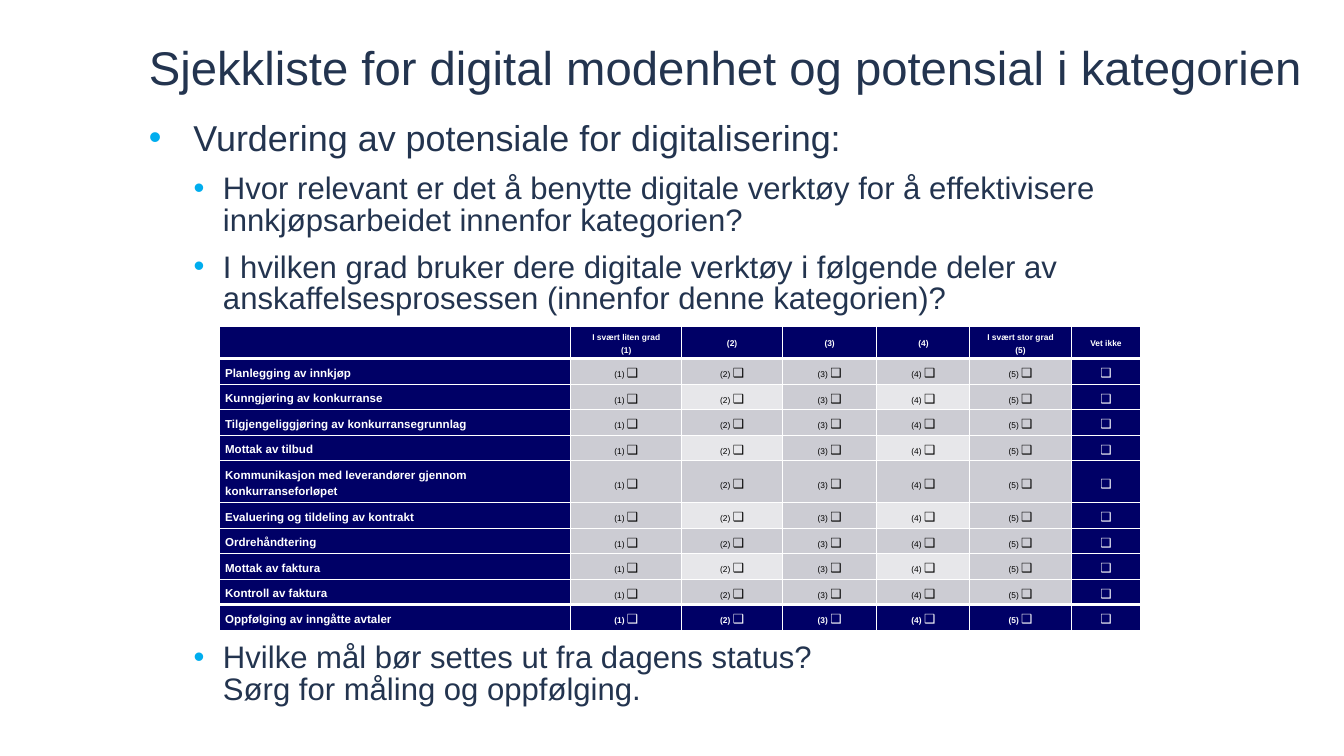
from lxml import etree
from pptx import Presentation
from pptx.dml.color import RGBColor
from pptx.enum.text import MSO_ANCHOR, PP_ALIGN
from pptx.oxml.ns import qn
from pptx.util import Pt

BOTTOM, MIDDLE, TOP = MSO_ANCHOR.BOTTOM, MSO_ANCHOR.MIDDLE, MSO_ANCHOR.TOP
CENTER, LEFT = PP_ALIGN.CENTER, PP_ALIGN.LEFT

INK = RGBColor(0x23, 0x34, 0x4F)
BULLET_BLUE = RGBColor(0x00, 0xAD, 0xEE)
NAVY = RGBColor(0x00, 0x00, 0x66)
GREY = RGBColor(0xCC, 0xCC, 0xD3)
LIGHT_GREY = RGBColor(0xE7, 0xE7, 0xEA)
WHITE = RGBColor(0xFF, 0xFF, 0xFF)
BLACK = RGBColor(0x00, 0x00, 0x00)

FONT = "Arial"
CHECKBOX = "❑"
MARGIN = 141.8
BODY_WIDTH = 1105
# Per outline level: size, line spacing, left indent, bullet offset
LEVELS = [(34.2, 0.94, 42.5, 42.5), (29.6, 0.84, 70.6, 28)]

TITLE = "Sjekkliste for digital modenhet og potensial i kategorien"
QUESTIONS = [
    (0, "Vurdering av potensiale for digitalisering:"),
    (1, "Hvor relevant er det å benytte digitale verktøy for å effektivisere "
        "innkjøpsarbeidet innenfor kategorien?"),
    (1, "I hvilken grad bruker dere digitale verktøy i følgende deler av "
        "anskaffelsesprosessen (innenfor denne kategorien)?"),
]
GOALS = [(1, "Hvilke mål bør settes ut fra dagens status?\vSørg for måling og oppfølging.")]

GRADES = ["", "I svært liten grad\v(1)", "(2)", "(3)", "(4)",
          "I svært stor grad\v(5)", "Vet ikke"]
STEPS = [
    "Planlegging av innkjøp",
    "Kunngjøring av konkurranse",
    "Tilgjengeliggjøring av konkurransegrunnlag",
    "Mottak av tilbud",
    "Kommunikasjon med leverandører gjennom konkurranseforløpet",
    "Evaluering og tildeling av kontrakt",
    "Ordrehåndtering",
    "Mottak av faktura",
    "Kontroll av faktura",
    "Oppfølging av inngåtte avtaler",
]
COLUMN_WIDTHS = [334.8, 105.8, 95.8, 90, 88.6, 96.5, 66.2]
HEADER_HEIGHT, STEP_HEIGHT, TALL_STEP_HEIGHT = 29.5, 23.1, 36.6
TALL_STEP = 5


def style_font(font, size, color, bold=False):
    font.name = FONT
    font.size = Pt(size)
    font.bold = bold
    font.color.rgb = color


def add_text_frame(slide, left, top, width, height, anchor=TOP):
    frame = slide.shapes.add_textbox(Pt(left), Pt(top), Pt(width), Pt(height)).text_frame
    frame.word_wrap = True
    frame.vertical_anchor = anchor
    frame.margin_left = frame.margin_right = frame.margin_top = frame.margin_bottom = 0
    return frame


def set_bullet(paragraph, indent, offset):
    properties = paragraph._p.get_or_add_pPr()
    properties.set("marL", str(Pt(indent)))
    properties.set("indent", str(-Pt(offset)))
    color = etree.SubElement(properties, qn("a:buClr"))
    etree.SubElement(color, qn("a:srgbClr"), val=str(BULLET_BLUE))
    etree.SubElement(properties, qn("a:buFont"), typeface=FONT)
    etree.SubElement(properties, qn("a:buChar"), char="•")


def add_title(slide):
    title = add_text_frame(slide, MARGIN, 36.7, 1138, 54.7, BOTTOM).paragraphs[0]
    title.text = TITLE
    title.line_spacing = 0.9
    style_font(title.font, 45, INK)


def add_outline(slide, top, height, items):
    frame = add_text_frame(slide, MARGIN, top, BODY_WIDTH, height)
    for index, (level, wording) in enumerate(items):
        item = frame.add_paragraph() if index else frame.paragraphs[0]
        size, spacing, indent, offset = LEVELS[level]
        item.text = wording
        item.level = level
        item.line_spacing = spacing
        if index:
            item.space_before = Pt(15)
        set_bullet(item, indent, offset)
        style_font(item.font, size, INK)


def set_borders(cell, top=1, bottom=1):
    properties = cell._tc.get_or_add_tcPr()
    for side, weight in (("L", 1), ("R", 1), ("T", top), ("B", bottom)):
        line = etree.SubElement(properties, qn(f"a:ln{side}"), w=str(Pt(weight)))
        fill = etree.SubElement(line, qn("a:solidFill"))
        etree.SubElement(fill, qn("a:srgbClr"), val=str(WHITE))


def fill_cell(cell, pieces, fill, color, bold, align=CENTER, top=1, bottom=1):
    """Write (wording, size) pieces into a cell and give it fill and borders."""
    set_borders(cell, top, bottom)
    cell.fill.solid()
    cell.fill.fore_color.rgb = fill
    cell.vertical_anchor = MIDDLE
    cell.margin_left = cell.margin_right = Pt(5.6)
    cell.margin_top = cell.margin_bottom = Pt(2.8)
    content = cell.text_frame.paragraphs[0]
    content.alignment = align
    content.line_spacing = 1.3
    style_font(content.font, pieces[0][1], color, bold)
    for wording, size in pieces:
        # A vertical tab marks a line break
        for index, line in enumerate(wording.split("\v")):
            if index:
                content.add_line_break()
            run = content.add_run()
            run.text = line
            style_font(run.font, size, color, bold)


def add_checklist(slide):
    heights = [HEADER_HEIGHT] + [STEP_HEIGHT] * len(STEPS)
    heights[TALL_STEP] = TALL_STEP_HEIGHT
    table = slide.shapes.add_table(
        len(heights), len(GRADES), Pt(208.8), Pt(311),
        Pt(sum(COLUMN_WIDTHS)), Pt(sum(heights))).table
    table.first_row = table.horz_banding = False
    for column, width in zip(table.columns, COLUMN_WIDTHS):
        column.width = Pt(width)
    for row, height in zip(table.rows, heights):
        row.height = Pt(height)

    for column, grade in enumerate(GRADES):
        fill_cell(table.cell(0, column), [(grade, 8)], NAVY, WHITE, True, bottom=3)

    unknown = len(GRADES) - 1
    for row, step in enumerate(STEPS, start=1):
        is_last = row == len(STEPS)
        top = 3 if is_last else 1
        fill_cell(table.cell(row, 0), [(step, 11)], NAVY, WHITE, True, LEFT, top)
        for grade in range(1, unknown):
            is_light = row % 2 == 0 and grade % 2 == 0
            shade = NAVY if is_last else LIGHT_GREY if is_light else GREY
            fill_cell(table.cell(row, grade), [(f"({grade}) ", 8), (CHECKBOX, 12)],
                      shade, WHITE if is_last else BLACK, is_last, top=top)
        fill_cell(table.cell(row, unknown), [(CHECKBOX, 12)], NAVY, WHITE, True, top=top)


def main():
    presentation = Presentation()
    presentation.slide_width = Pt(1280)
    presentation.slide_height = Pt(720)
    slide = presentation.slides.add_slide(presentation.slide_layouts[6])
    add_title(slide)
    add_outline(slide, 113, 185, QUESTIONS)
    add_outline(slide, 613, 62, GOALS)
    add_checklist(slide)
    presentation.save("out.pptx")


if __name__ == "__main__":
    main()
